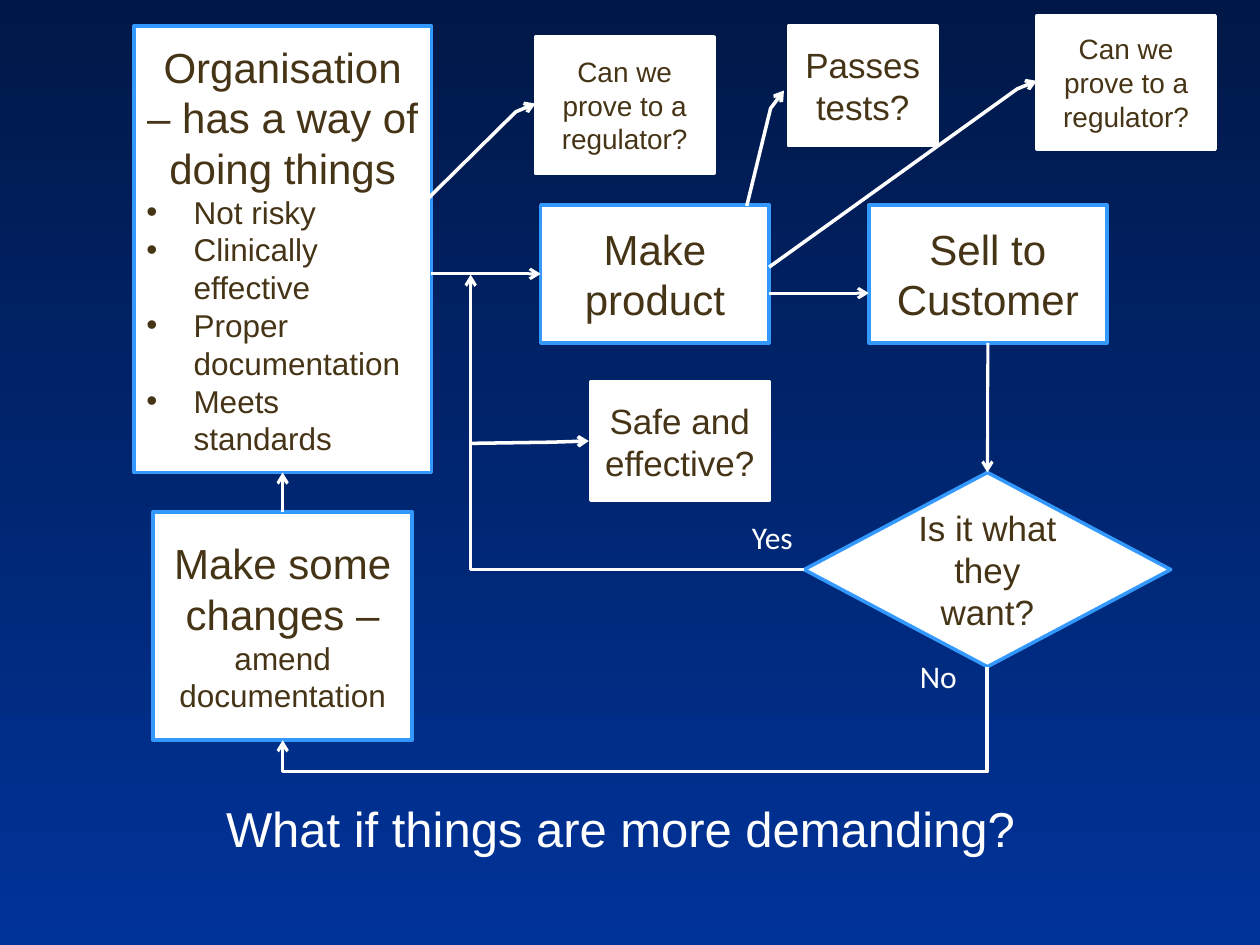
from lxml import etree
from pptx import Presentation
from pptx.dml.color import RGBColor
from pptx.enum.shapes import MSO_CONNECTOR, MSO_SHAPE
from pptx.enum.text import MSO_ANCHOR, MSO_AUTO_SIZE, PP_ALIGN
from pptx.oxml.ns import qn
from pptx.util import Pt

PROCESS = MSO_SHAPE.FLOWCHART_PROCESS
DECISION = MSO_SHAPE.FLOWCHART_DECISION
CALLOUT = MSO_SHAPE.LINE_CALLOUT_2
STRAIGHT, ELBOW = MSO_CONNECTOR.STRAIGHT, MSO_CONNECTOR.ELBOW
LEFT, CENTER = PP_ALIGN.LEFT, PP_ALIGN.CENTER
MIDDLE = MSO_ANCHOR.MIDDLE
TOP_SIDE, LEFT_SIDE, BOTTOM_SIDE = 0, 1, 2
TITLE_ONLY = 5

COLORS = {
    "bg_top": "001847",
    "bg_bottom": "003399",
    "white": "FFFFFF",
    "border": "3399FF",
    "text": "463416",
}


def rgb(name):
    return RGBColor.from_string(COLORS[name])


def add_run(p, text, size, color="text", font="Arial"):
    r = p.add_run()
    r.text = text
    r.font.size = Pt(size)
    r.font.name = font
    r.font.color.rgb = rgb(color)


def set_background(s):
    fill = s.background.fill
    fill.gradient()
    fill.gradient_angle = 270
    for stop, name, pos in zip(fill.gradient_stops, ("bg_top", "bg_bottom"), (0, 1)):
        stop.color.rgb = rgb(name)
        stop.position = pos


def add_title(s, text, box):
    sp = s.shapes.title
    sp.left, sp.top, sp.width, sp.height = map(Pt, box)
    tf = sp.text_frame
    tf.auto_size = MSO_AUTO_SIZE.NONE
    tf.vertical_anchor = MIDDLE
    p = tf.paragraphs[0]
    p.alignment = CENTER
    add_run(p, text, 28, "white")


def add_box(s, kind, box, runs, border="border"):
    """Add a white shape; runs holds (text, size) pairs of its first paragraph."""
    sp = s.shapes.add_shape(kind, *map(Pt, box))
    sp.shadow.inherit = False
    sp.fill.solid()
    sp.fill.fore_color.rgb = rgb("white")
    sp.line.color.rgb = rgb(border)
    sp.line.width = Pt(2)
    tf = sp.text_frame
    tf.word_wrap = True
    tf.vertical_anchor = MIDDLE
    p = tf.paragraphs[0]
    p.alignment = CENTER
    for text, size in runs:
        add_run(p, text, size)
    return sp


def add_bullets(tf, items, size):
    for item in items:
        p = tf.add_paragraph()
        p.alignment = LEFT
        pPr = p._p.get_or_add_pPr()
        pPr.set("marL", str(Pt(27)))
        pPr.set("indent", str(-Pt(27)))
        etree.SubElement(pPr, qn("a:buFont")).set("typeface", "Arial")
        etree.SubElement(pPr, qn("a:buChar")).set("char", "•")
        add_run(p, item, size)


def add_arrowhead(line, end):
    etree.SubElement(line._get_or_add_ln(), qn(end)).set("type", "arrow")


def add_callout(s, box, text, size, leader):
    """Add a box whose leader line is given as y, x fractions of the box."""
    sp = add_box(s, CALLOUT, box, [(text, size)], "white")
    for i, value in enumerate(leader):
        sp.adjustments[i] = value
    add_arrowhead(sp.line, "a:headEnd")


def add_arrow(s, begin, end, kind=STRAIGHT):
    cxn = s.shapes.add_connector(kind, *map(Pt, begin + end))
    cxn.line.color.rgb = rgb("white")
    cxn.line.width = Pt(1.75)
    add_arrowhead(cxn.line, "a:tailEnd")
    etree.SubElement(cxn._element.spPr, qn("a:effectLst"))
    return cxn


def add_elbow(s, begin, end, bend, turned=False):
    """Add a bent arrow; a turned one leaves downwards and goes to the left."""
    if turned:
        (x1, y1), (x2, y2) = begin, end
        cx, cy = (x1 + x2) / 2, (y1 + y2) / 2
        half_w, half_h = (y2 - y1) / 2, (x1 - x2) / 2
        begin, end = (cx - half_w, cy - half_h), (cx + half_w, cy + half_h)
    cxn = add_arrow(s, begin, end, ELBOW)
    spPr = cxn._element.spPr
    if turned:
        spPr.find(qn("a:xfrm")).set("rot", str(90 * 60000))
    gd = etree.SubElement(spPr.find(qn("a:prstGeom")).find(qn("a:avLst")), qn("a:gd"))
    gd.set("name", "adj1")
    gd.set("fmla", f"val {round(bend * 100000)}")


def add_label(s, left, top, text):
    tf = s.shapes.add_textbox(Pt(left), Pt(top), Pt(57), Pt(41)).text_frame
    tf.word_wrap = True
    add_run(tf.paragraphs[0], text, 18, "white", "Calibri")


def main():
    prs = Presentation()
    prs.slide_width, prs.slide_height = Pt(720), Pt(540)
    s = prs.slides.add_slide(prs.slide_layouts[TITLE_ONLY])
    set_background(s)
    add_title(s, "What if things are more demanding?", (54, 453, 601, 40))

    organisation = add_box(s, PROCESS, (76.5, 15, 170, 255),
                           [("Organisation – has a way of doing things", 24)])
    add_bullets(organisation.text_frame,
                ("Not risky", "Clinically effective", "Proper documentation",
                 "Meets standards"), 18)
    make = add_box(s, PROCESS, (309, 117, 130.5, 79), [("Make product", 24)])
    sell = add_box(s, PROCESS, (496.5, 117, 136, 79), [("Sell to Customer", 24)])
    decision = add_box(s, DECISION, (459.5, 270, 209.5, 111),
                       [("Is it what they want?", 20)])
    changes = add_box(s, PROCESS, (87.5, 292.5, 148, 130.5),
                      [("Make some changes – ", 24), ("amend documentation", 18)])

    sell_to_decision = add_arrow(s, (564, 196), (564, 270))
    sell_to_decision.begin_connect(sell, BOTTOM_SIDE)
    sell_to_decision.end_connect(decision, TOP_SIDE)
    add_arrow(s, (439.5, 167.5), (496.5, 167.5))
    organisation_to_make = add_arrow(s, (246.5, 156.5), (309, 156.5))
    organisation_to_make.end_connect(make, LEFT_SIDE)
    changes_to_organisation = add_arrow(s, (161.5, 292.5), (161.5, 270))
    changes_to_organisation.begin_connect(changes, TOP_SIDE)
    changes_to_organisation.end_connect(organisation, BOTTOM_SIDE)
    add_elbow(s, (459.5, 325.5), (269, 157), 1)
    add_elbow(s, (564, 381), (161.5, 423), 1.43, turned=True)

    add_label(s, 422.5, 292.5, "Yes")
    add_label(s, 518.5, 372, "No")

    regulator = "Can we prove to a regulator?"
    add_callout(s, (450.5, 15, 85, 68), "Passes tests?", 20,
                (0.54, -0.03, 0.69, -0.12, 1.51, -0.28))
    add_callout(s, (592.5, 9, 102, 76), regulator, 16,
                (0.49, 0, 0.55, -0.11, 1.89, -1.5))
    add_callout(s, (306, 21, 102, 78), regulator, 16,
                (0.49, 0, 0.55, -0.11, 1.88, -1.14))
    add_callout(s, (337.5, 218, 102, 68), "Safe and effective?", 20,
                (0.5, -0.01, 0.51, -0.22, 0.52, -0.68))

    prs.save("out.pptx")


if __name__ == "__main__":
    main()
